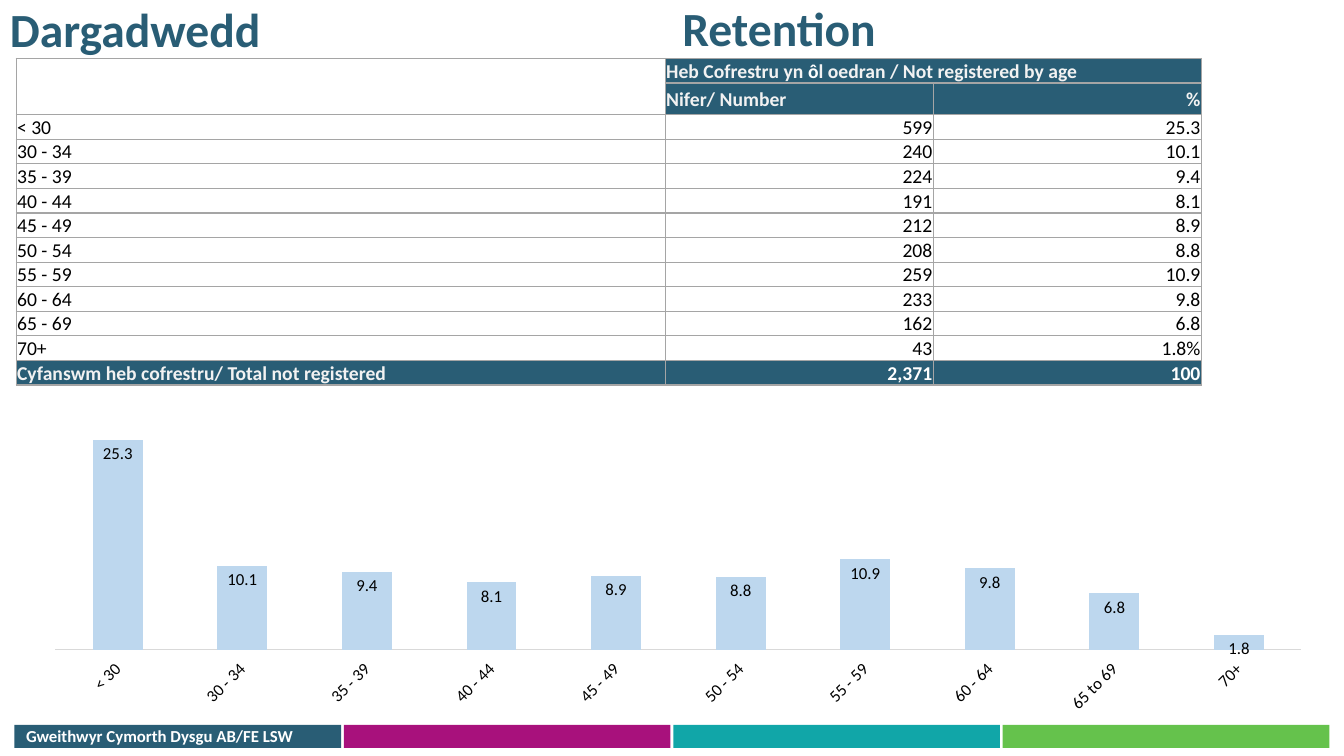
from lxml import etree
from pptx import Presentation
from pptx.chart.data import CategoryChartData
from pptx.dml.color import RGBColor
from pptx.enum.chart import XL_CHART_TYPE, XL_LABEL_POSITION, XL_TICK_LABEL_POSITION, XL_TICK_MARK
from pptx.enum.shapes import MSO_SHAPE
from pptx.enum.text import MSO_ANCHOR, PP_ALIGN
from pptx.oxml import parse_xml
from pptx.oxml.ns import nsdecls, qn
from pptx.util import Inches, Pt

RECT = MSO_SHAPE.RECTANGLE
STACKED = XL_CHART_TYPE.COLUMN_STACKED
INSIDE_END = XL_LABEL_POSITION.INSIDE_END
LOW = XL_TICK_LABEL_POSITION.LOW
NO_TICK = XL_TICK_MARK.NONE
TOP, MIDDLE, BOTTOM = MSO_ANCHOR.TOP, MSO_ANCHOR.MIDDLE, MSO_ANCHOR.BOTTOM
LEFT, RIGHT = PP_ALIGN.LEFT, PP_ALIGN.RIGHT

COLORS = {
    "navy": "295D75", "magenta": "A8117C", "teal": "11A6A8", "green": "65C24C",
    "white": "FFFFFF", "pale": "F2F2F2", "black": "000000",
    "border": "A5A5A5", "axis": "D9D9D9", "bar": "BDD7EE",
}
AGES = ["< 30", "30 - 34", "35 - 39", "40 - 44", "45 - 49",
        "50 - 54", "55 - 59", "60 - 64", "65 - 69", "70+"]
NUMBERS = [599, 240, 224, 191, 212, 208, 259, 233, 162, 43]
PERCENTS = [25.3, 10.1, 9.4, 8.1, 8.9, 8.8, 10.9, 9.8, 6.8, 1.8]


def rgb(name):
    return RGBColor.from_string(COLORS[name])


class Deck:
    font = "Calibri"

    def __init__(self):
        self.prs = Presentation()
        self.prs.slide_width, self.prs.slide_height = Inches(13.33), Inches(7.5)
        self.s = self.prs.slides.add_slide(self.prs.slide_layouts[6])

    def x(self, percent):
        return round(self.prs.slide_width * percent / 100)

    def y(self, percent):
        return round(self.prs.slide_height * percent / 100)

    def box(self, left, top, width, height):
        return self.x(left), self.y(top), self.x(width), self.y(height)

    def style(self, font, size, color, bold=False):
        font.name, font.size, font.bold = self.font, Pt(size), bold
        font.color.rgb = rgb(color)

    def run(self, p, text, size, color, bold=False):
        r = p.add_run()
        r.text = text
        self.style(r.font, size, color, bold)

    def band(self, area, color):
        sp = self.s.shapes.add_shape(RECT, *self.box(*area))
        sp.shadow.inherit = False
        sp.fill.solid()
        sp.fill.fore_color.rgb = rgb(color)
        sp.line.fill.background()

    def text(self, area, text, size, color):
        tf = self.s.shapes.add_textbox(*self.box(*area)).text_frame
        tf.word_wrap = True
        tf.vertical_anchor = TOP
        p = tf.paragraphs[0]
        p.line_spacing = 0.9
        self.run(p, text, size, color, True)

    def table(self, left, top, widths, heights):
        area = self.box(left, top, sum(widths), sum(heights))
        table = self.s.shapes.add_table(len(heights), len(widths), *area).table
        table.first_row = table.horz_banding = False
        for column, width in zip(table.columns, widths):
            column.width = self.x(width)
        for row, height in zip(table.rows, heights):
            row.height = self.y(height)
        for cell in table.iter_cells():
            cell.margin_left = cell.margin_right = cell.margin_top = Inches(0.01)
            cell.margin_bottom = 0
            cell.fill.background()
            tcPr = cell._tc.get_or_add_tcPr()
            for i, side in enumerate("LRTB"):
                tcPr.insert(i, parse_xml(
                    f'<a:ln{side} {nsdecls("a")} w="12700"><a:solidFill>'
                    f'<a:srgbClr val="{COLORS["border"]}"/></a:solidFill></a:ln{side}>'))
        return table

    def cell(self, cell, runs, align=LEFT, anchor=MIDDLE, filled=False):
        cell.vertical_anchor = anchor
        if filled:
            cell.fill.solid()
            cell.fill.fore_color.rgb = rgb("navy")
        p = cell.text_frame.paragraphs[0]
        p.alignment = align
        for text, color in runs:
            self.run(p, text, 14, color, filled)

    def column_chart(self, area, categories, values, maximum, plot):
        data = CategoryChartData(number_format="0.0")
        data.categories = categories
        data.add_series("Series 1", values)
        chart = self.s.shapes.add_chart(STACKED, *self.box(*area), data).chart
        chart.has_legend = chart.has_title = False
        self.style(chart.font, 10, "black")

        bars = chart.plots[0]
        bars.gap_width, bars.overlap, bars.vary_by_categories = 150, 100, False
        bars.series[0].format.fill.solid()
        bars.series[0].format.fill.fore_color.rgb = rgb("bar")
        bars.has_data_labels = True
        labels = bars.data_labels
        labels.show_value, labels.position = True, INSIDE_END
        self.style(labels.font, 12, "black")

        ages = chart.category_axis
        ages.major_tick_mark = ages.minor_tick_mark = NO_TICK
        ages.tick_label_position = LOW
        self.style(ages.tick_labels.font, 12, "black")
        ages.format.line.color.rgb = rgb("axis")
        ages.format.line.width = Pt(0.75)
        ages._element.find(qn("c:txPr")).find(qn("a:bodyPr")).set("rot", "-2700000")

        shares = chart.value_axis
        shares.minimum_scale, shares.maximum_scale = 0, maximum
        shares.has_major_gridlines = shares.visible = False

        plot_area = chart._chartSpace.chart.plotArea
        for old in plot_area.findall(qn("c:layout")):
            plot_area.remove(old)
        layout = parse_xml(f'<c:layout {nsdecls("c")}/>')
        manual = etree.SubElement(layout, qn("c:manualLayout"))
        settings = [("layoutTarget", "inner"), ("xMode", "edge"), ("yMode", "edge")]
        for tag, value in settings + list(zip("xywh", plot)):
            etree.SubElement(manual, qn(f"c:{tag}")).set("val", str(value))
        plot_area.insert(0, layout)


def main():
    deck = Deck()
    for i, color in enumerate(["navy", "magenta", "teal", "green"]):
        deck.band((1.08 + 24.51 * i, 95.87, 24.3, 3.07), color)

    deck.text((0, 0.13, 39.15, 6.8), "Dargadwedd", 34, "navy")
    deck.text((50.03, 0, 41.4, 6.8), "Retention", 34, "navy")

    table = deck.table(1.2, 7.73, [48.3, 19.95, 19.95], [3.25, 4.2] + [3.25] * 11)
    table.cell(0, 0).merge(table.cell(1, 0))
    table.cell(0, 1).merge(table.cell(0, 2))
    deck.cell(table.cell(0, 1), [("Heb Cofrestru yn ", "pale"), ("ô", "white"),
                                 ("l oedran / Not registered by age", "pale")], filled=True)
    deck.cell(table.cell(1, 1), [("Nifer/ Number", "pale")], filled=True)
    deck.cell(table.cell(1, 2), [("%", "pale")], RIGHT, filled=True)
    for i, (age, number, percent) in enumerate(zip(AGES, NUMBERS, PERCENTS), 2):
        sign = "%" if age == "70+" else ""
        deck.cell(table.cell(i, 0), [(age, "black")], anchor=BOTTOM)
        deck.cell(table.cell(i, 1), [(str(number), "black")], RIGHT)
        deck.cell(table.cell(i, 2), [(f"{percent}{sign}", "black")], RIGHT)
    deck.cell(table.cell(12, 0), [("Cyfanswm heb cofrestru/ Total not registered", "pale")],
              filled=True)
    deck.cell(table.cell(12, 1), [(f"{sum(NUMBERS):,}", "white")], RIGHT, filled=True)
    deck.cell(table.cell(12, 2), [("100", "white")], RIGHT, filled=True)

    categories = [age.replace("65 - 69", "65 to 69") for age in AGES]
    deck.column_chart((1.2, 51.73, 97.58, 43.87), categories, PERCENTS, 30,
                      (0.03, 0.03, 0.95, 0.75))

    deck.text((1.2, 95.6, 22.65, 4.53), "Gweithwyr Cymorth Dysgu AB/FE LSW", 12, "white")
    deck.prs.save("out.pptx")


if __name__ == "__main__":
    main()
